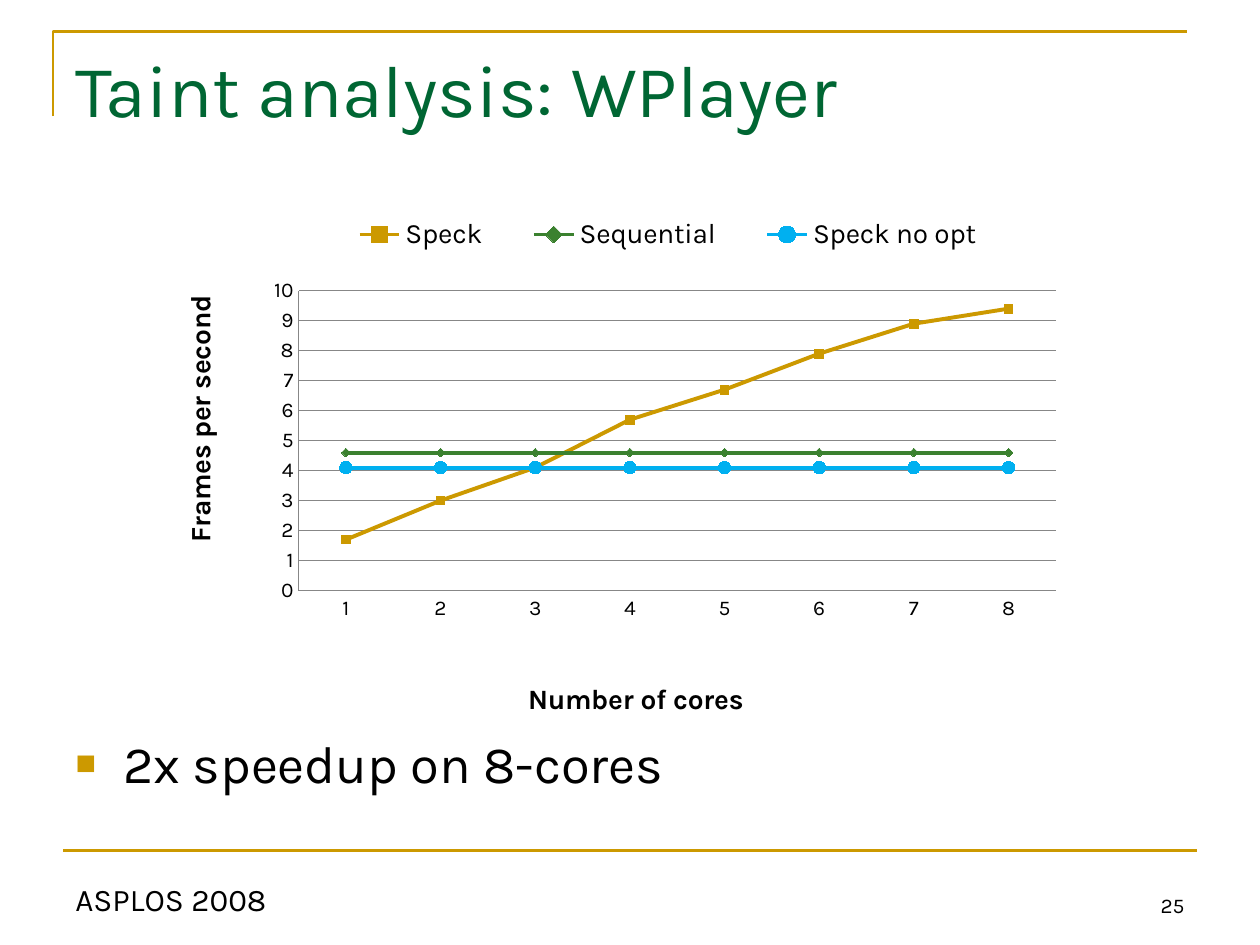
"""Build the taint analysis slide with its frames-per-second line chart."""
import dataclasses

import lxml.etree
import pptx
import pptx.chart.data
import pptx.dml.color
import pptx.enum.chart
import pptx.enum.shapes
import pptx.enum.text
import pptx.oxml
import pptx.oxml.ns
import pptx.util

Cm = pptx.util.Cm
Pt = pptx.util.Pt
qn = pptx.oxml.ns.qn
Color = pptx.dml.color.RGBColor.from_string
Anchor = pptx.enum.text.MSO_ANCHOR
Align = pptx.enum.text.PP_ALIGN
Marker = pptx.enum.chart.XL_MARKER_STYLE


@dataclasses.dataclass(frozen=True)
class Theme:
    font: str = "Karla"
    gold: str = "CC9900"
    title: str = "006633"
    text: str = "000000"
    green: str = "3B812F"
    blue: str = "00B0F0"
    grid: str = "878787"
    title_size: int = 42
    body_size: int = 30
    footer_size: int = 18
    chart_size: int = 16
    small_size: int = 12


theme = Theme()


def write(frame, text, size, color=theme.text, bold=False):
    para = frame.paragraphs[0]
    span = para.add_run()
    span.text = text
    span.font.name = theme.font
    span.font.size = Pt(size)
    span.font.bold = bold
    span.font.color.rgb = Color(color)
    return para


def place(part, index, **fractions):
    for old in part.findall(qn("c:layout")):
        part.remove(old)
    layout = lxml.etree.Element(qn("c:layout"))
    manual = lxml.etree.SubElement(layout, qn("c:manualLayout"))
    settings = {"xMode": "edge", "yMode": "edge", **fractions}
    if part.tag == qn("c:plotArea"):
        settings = {"layoutTarget": "inner", **settings}
    for name, value in settings.items():
        lxml.etree.SubElement(manual, qn(f"c:{name}")).set("val", str(value))
    part.insert(index, layout)


deck = pptx.Presentation()
deck.slide_width, deck.slide_height = Cm(25.4), Cm(19.05)
page = deck.slides.add_slide(deck.slide_layouts[1])

builder = page.shapes.build_freeform(Cm(1.07), Cm(2.34))
builder.add_line_segments([(Cm(1.07), Cm(0.64)), (Cm(23.93), Cm(0.64))], close=False)
corner = builder.convert_to_shape()
corner.shadow.inherit = False
corner.fill.background()
rule = page.shapes.add_connector(
    pptx.enum.shapes.MSO_CONNECTOR.STRAIGHT, Cm(1.27), Cm(17.15), Cm(24.13), Cm(17.15))
lxml.etree.SubElement(rule.element.spPr, qn("a:effectLst"))
for stroke in (corner, rule):
    stroke.line.color.rgb = Color(theme.gold)
    stroke.line.width = Pt(1.5)

title, body = page.placeholders
for box, top, height in ((title, 0.76, 3.18), (body, 14.61, 2.41)):
    box.left, box.top, box.width, box.height = Cm(1.27), Cm(top), Cm(22.86), Cm(height)
    box.text_frame.auto_size = pptx.enum.text.MSO_AUTO_SIZE.NONE
    box.text_frame.vertical_anchor = Anchor.TOP
write(title.text_frame, "Taint analysis: WPlayer", theme.title_size, theme.title).alignment = Align.LEFT

para = write(body.text_frame, "2x speedup on 8-cores", theme.body_size)
para.space_before = Pt(6)
properties = para._p.get_or_add_pPr()
properties.set("marL", str(Cm(0.96)))
properties.set("indent", str(-Cm(0.96)))
bullet_color = lxml.etree.SubElement(properties, qn("a:buClr"))
lxml.etree.SubElement(bullet_color, qn("a:srgbClr")).set("val", theme.gold)
lxml.etree.SubElement(properties, qn("a:buSzPct")).set("val", "65000")
lxml.etree.SubElement(properties, qn("a:buChar")).set("char", "■")

for text, left, width, size, align in (
    ("ASPLOS 2008", 1.27, 8.05, theme.footer_size, Align.LEFT),
    ("25", 18.21, 5.92, theme.small_size, Align.RIGHT),
):
    box = page.shapes.add_textbox(Cm(left), Cm(17.35), Cm(width), Cm(1.27))
    box.text_frame.word_wrap = True
    box.text_frame.vertical_anchor = Anchor.BOTTOM
    write(box.text_frame, text, size).alignment = align

series_styles = (
    ("Speck", [1.7, 3, 4.1, 5.7, 6.7, 7.9, 8.9, 9.4], theme.gold, Marker.SQUARE, 5),
    ("Sequential", [4.6] * 8, theme.green, Marker.DIAMOND, 5),
    ("Speck no opt", [4.1] * 8, theme.blue, Marker.CIRCLE, 7),
)
data = pptx.chart.data.CategoryChartData()
data.categories = [str(cores) for cores in range(1, 9)]
for name, values, *_ in series_styles:
    data.add_series(name, values)
chart = page.shapes.add_chart(
    pptx.enum.chart.XL_CHART_TYPE.LINE_MARKERS,
    Cm(3.38), Cm(3.81), Cm(18.85), Cm(10.8), data).chart
chart.font.name = theme.font
chart.font.size = Pt(theme.small_size)
chart.font.color.rgb = Color(theme.text)

plot = chart.plots[0]
plot.vary_by_categories = False
for series, (_, _, color, style, size) in zip(plot.series, series_styles):
    series.smooth = False
    series.format.line.color.rgb = Color(color)
    series.format.line.width = Pt(2.25)
    series.marker.style = style
    series.marker.size = size
    series.marker.format.fill.solid()
    series.marker.format.fill.fore_color.rgb = Color(color)
    series.marker.format.line.color.rgb = Color(color)

frames_axis = chart.value_axis
frames_axis.minimum_scale, frames_axis.maximum_scale, frames_axis.major_unit = 0, 10, 1
frames_axis.has_major_gridlines = True
for axis in (frames_axis, chart.category_axis):
    axis.major_tick_mark = pptx.enum.chart.XL_TICK_MARK.NONE
    axis.tick_labels.font.name = theme.font
    axis.tick_labels.font.size = Pt(theme.small_size)
for line in (frames_axis.major_gridlines.format.line, frames_axis.format.line,
             chart.category_axis.format.line):
    line.color.rgb = Color(theme.grid)
    line.width = Pt(0.75)

chart.has_legend = True
chart.legend.position = pptx.enum.chart.XL_LEGEND_POSITION.RIGHT
chart.legend.include_in_layout = False
chart.legend.font.name = theme.font
chart.legend.font.size = Pt(theme.chart_size)
chart.has_title = True
for heading, text, x, y in (
    (chart.chart_title, "Number of cores", 0.38, 0.91),
    (frames_axis.axis_title, "Frames per second", 0.01, 0.19),
):
    write(heading.text_frame, text, theme.chart_size, bold=True)
    place(heading.element, 1, x=x, y=y)
turned = frames_axis.axis_title.element.find(".//" + qn("a:bodyPr"))
turned.set("rot", "-5400000")
turned.set("vert", "horz")
place(chart.element.find(".//" + qn("c:legend")), 1, x=0.16, y=0.04, w=0.75, h=0.09)
place(chart.element.find(".//" + qn("c:plotArea")), 0, x=0.14, y=0.19, w=0.81, h=0.56)

deck.save("out.pptx")
